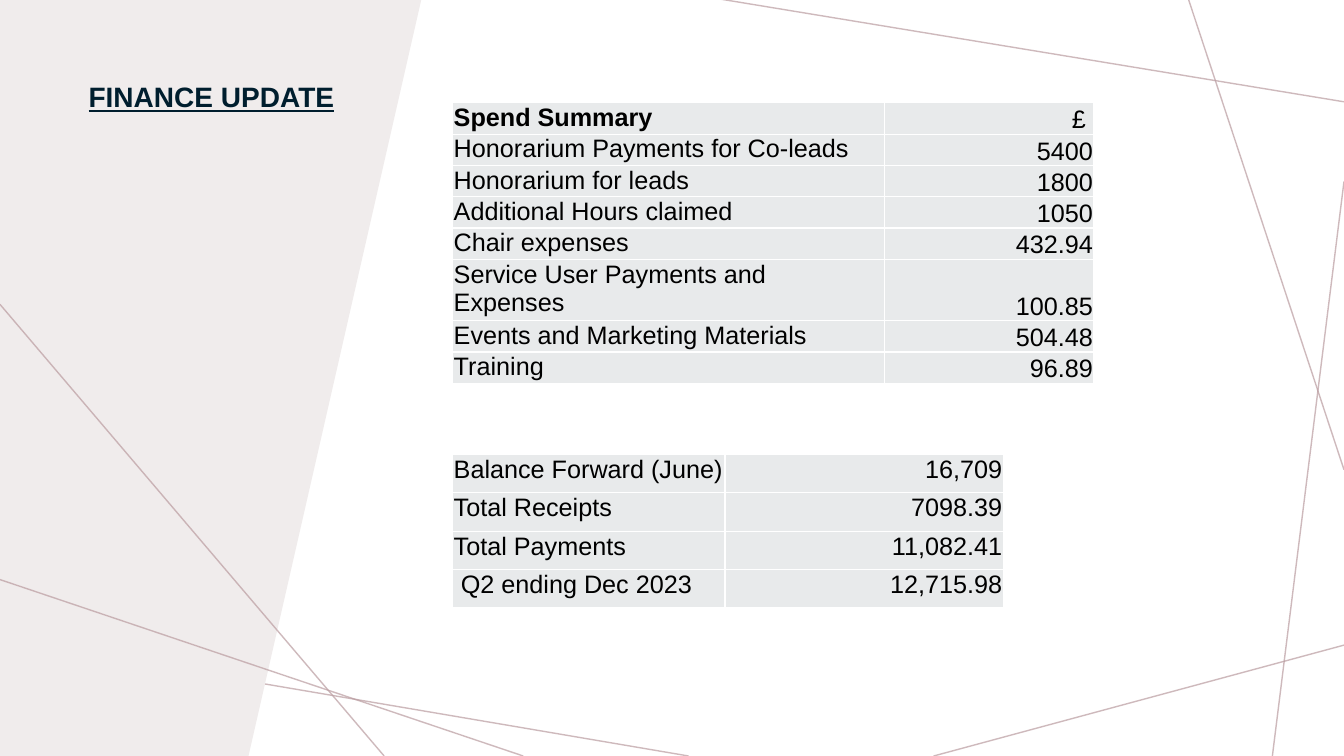
"""Build the finance update slide with its spending and balance tables."""
import pptx
import pptx.dml.color
import pptx.enum.shapes
import pptx.enum.text
import pptx.oxml
import pptx.oxml.ns
import pptx.util
from pptx.util import Inches

ROSE = pptx.dml.color.RGBColor(0xBA, 0x9C, 0xA0)
PANEL = pptx.dml.color.RGBColor(0xF0, 0xEC, 0xEC)
NAVY = pptx.dml.color.RGBColor(0x00, 0x1E, 0x2E)
BLACK = pptx.dml.color.RGBColor(0x00, 0x00, 0x00)
WHITE = pptx.dml.color.RGBColor(0xFF, 0xFF, 0xFF)
CELL_GREY = pptx.dml.color.RGBColor(0xE8, 0xEA, 0xEB)
NAMESPACE = pptx.oxml.ns.nsdecls("a")

BACK_LINES = [
    (6.83, 7.5, -0.05, 6.33),
    (13.33, 6.4, 9.26, 7.5),
    (13.33, 1.8, 12.62, 7.5),
    (13.33, 4.66, 11.79, 0),
    (13.33, 1.01, 7.14, -0.01),
]
FRONT_LINES = [(0, 3.02, 3.81, 7.5), (5.19, 7.5, 0, 5.75)]

BALANCE_ROWS = [
    ("Balance Forward (June)", "16,709"),
    ("Total Receipts", "7098.39"),
    ("Total Payments", "11,082.41"),
    ("Q2 ending Dec 2023", "12,715.98"),
]
SPEND_ROWS = [
    ("Spend Summary", "£ "),
    ("Honorarium Payments for Co-leads", "5400"),
    ("Honorarium for leads", "1800"),
    ("Additional Hours claimed", "1050"),
    ("Chair expenses", "432.94"),
    ("Service User Payments and Expenses", "100.85"),
    ("Events and Marketing Materials", "504.48"),
    ("Training", "96.89"),
]


def add_lines(slide, lines):
    for start_x, start_y, end_x, end_y in lines:
        connector = slide.shapes.add_connector(
            pptx.enum.shapes.MSO_CONNECTOR.STRAIGHT,
            Inches(start_x), Inches(start_y), Inches(end_x), Inches(end_y))
        connector.line.width = pptx.util.Pt(1)
        connector.line.color.rgb = ROSE
        color = connector.line._get_or_add_ln().find(".//" + pptx.oxml.ns.qn("a:srgbClr"))
        color.append(pptx.oxml.parse_xml(f'<a:alpha {NAMESPACE} val="70000"/>'))
        connector._element.spPr.append(pptx.oxml.parse_xml(f"<a:effectLst {NAMESPACE}/>"))


def add_money_table(slide, top, widths, heights, rows, amount_anchor):
    table = slide.shapes.add_table(
        len(rows), 2, Inches(4.49), Inches(top),
        Inches(sum(widths)), Inches(sum(heights))).table
    table.first_row = False
    table.horz_banding = False
    for column, width in zip(table.columns, widths):
        column.width = Inches(width)
    for row, height, texts in zip(table.rows, heights, rows):
        row.height = Inches(height)
        for cell, text in zip(row.cells, texts):
            for side in ("lnL", "lnR", "lnT", "lnB"):
                cell._tc.get_or_add_tcPr().append(pptx.oxml.parse_xml(
                    f'<a:{side} {NAMESPACE} w="12700"><a:solidFill>'
                    f'<a:srgbClr val="{WHITE}"/></a:solidFill></a:{side}>'))
            cell.fill.solid()
            cell.fill.fore_color.rgb = CELL_GREY
            margins = {"margin_left": 0.01, "margin_top": 0.01,
                       "margin_right": 0.01, "margin_bottom": 0}
            if text.startswith("Q2"):
                margins["margin_left"] = 0.08
            for name, value in margins.items():
                setattr(cell, name, Inches(value))
            cell.text = text
            paragraph = cell.text_frame.paragraphs[0]
            if text == texts[1]:
                paragraph.alignment = pptx.enum.text.PP_ALIGN.RIGHT
                cell.vertical_anchor = amount_anchor
            font = paragraph.runs[0].font
            for name, value in {"name": "Arial", "size": pptx.util.Pt(18),
                                "bold": text == "Spend Summary"}.items():
                setattr(font, name, value)
            font.color.rgb = BLACK


presentation = pptx.Presentation()
presentation.slide_width = Inches(13.33)
presentation.slide_height = Inches(7.5)
slide = presentation.slides.add_slide(presentation.slide_layouts[6])

add_lines(slide, BACK_LINES)

builder = slide.shapes.build_freeform(Inches(0), Inches(-0.01))
builder.add_line_segments(
    [(Inches(x), Inches(y)) for x, y in [(4.18, -0.01), (2.46, 7.52), (0, 7.54)]])
side_panel = builder.convert_to_shape()
side_panel.shadow.inherit = False
side_panel.fill.solid()
side_panel.fill.fore_color.rgb = PANEL
side_panel.line.fill.background()

title = slide.shapes.add_textbox(Inches(0.78), Inches(0.78), Inches(2.7), Inches(2.03))
title.text_frame.word_wrap = True
paragraph = title.text_frame.paragraphs[0]
paragraph.line_spacing = 0.9
run = paragraph.add_run()
run.text = "FINANCE UPDATE"
for name, value in {"name": "Arial", "size": pptx.util.Pt(20),
                    "bold": True, "underline": True}.items():
    setattr(run.font, name, value)
run.font.color.rgb = NAVY

add_lines(slide, FRONT_LINES)

add_money_table(slide, 4.51, [2.7, 2.76], [0.38] * 4, BALANCE_ROWS,
                pptx.enum.text.MSO_ANCHOR.TOP)
add_money_table(slide, 1.02, [4.28, 2.08], [0.26] * 5 + [0.34] + [0.26] * 2, SPEND_ROWS,
                pptx.enum.text.MSO_ANCHOR.BOTTOM)

presentation.save("out.pptx")
